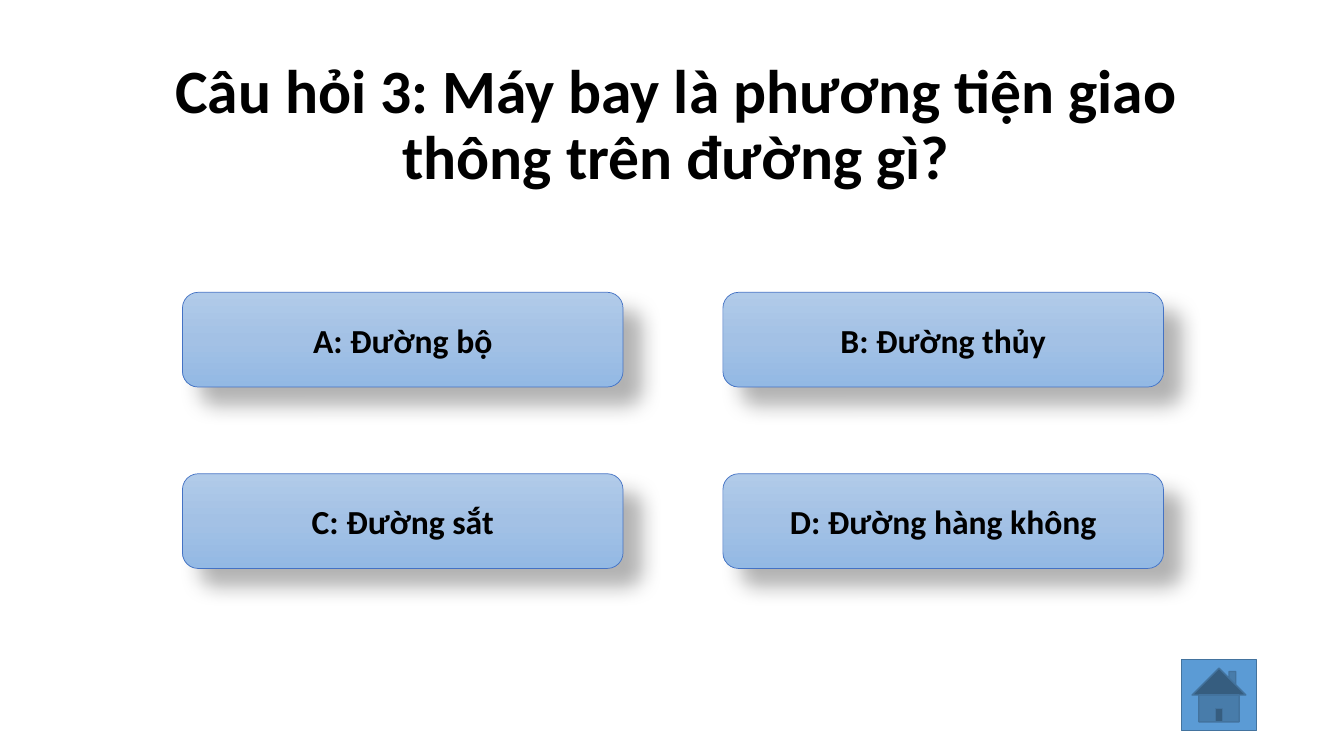
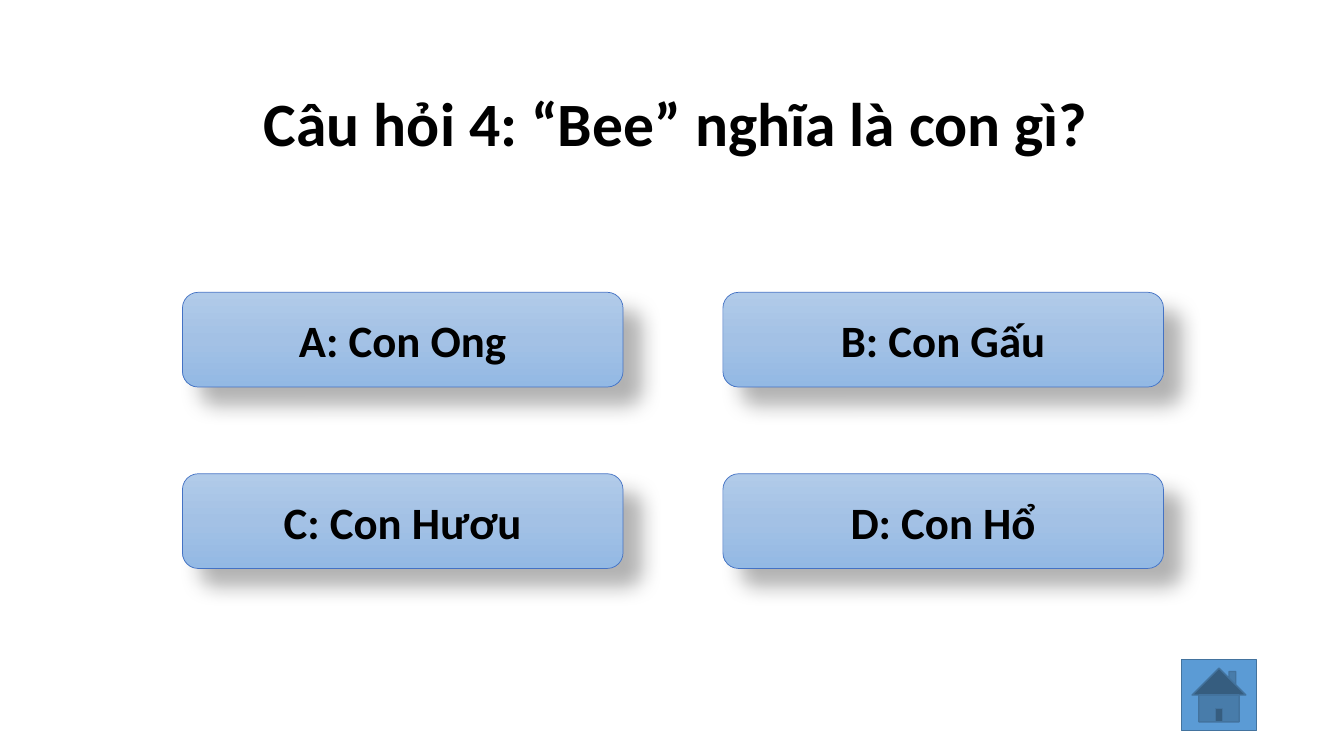
"""Build two multiple-choice quiz slides with a home button."""
import copy
import dataclasses

import pptx
import pptx.dml.color
import pptx.enum.shapes
import pptx.enum.text
import pptx.oxml
import pptx.oxml.ns
import pptx.shapes.autoshape
import pptx.slide
import pptx.util

Inches = pptx.util.Inches
Pt = pptx.util.Pt
Kind = pptx.enum.shapes.MSO_SHAPE
qn = pptx.oxml.ns.qn


@dataclasses.dataclass(frozen=True)
class Theme:
    font: str = "Calibri"
    text: str = "000000"
    answer_stops: tuple[tuple[float, str], ...] = ((0, "B1CBE9"), (0.5, "A3C1E5"), (1, "93B9E4"))
    answer_line: str = "4472C4"
    home_fill: str = "5B9BD5"
    home_line: str = "43739E"
    shadow: str = "000000"
    title_size: float = 44
    answer_line_width: float = 0.5
    home_line_width: float = 1


@dataclasses.dataclass(frozen=True)
class Box:
    left: float
    top: float
    width: float
    height: float

    def lengths(self) -> tuple[pptx.util.Length, ...]:
        return tuple(Inches(value) for value in dataclasses.astuple(self))


@dataclasses.dataclass(frozen=True)
class Question:
    title: str
    answers: tuple[str, str, str, str]
    answer_size: float


THEME = Theme()
TITLE_BOX = Box(0.96, 0.53, 11.5, 1.45)
HOME_BOX = Box(11.72, 6.54, 0.74, 0.71)
FIRST_ANSWER = Box(1.81, 2.9, 4.37, 0.94)
COLUMN_STEP = 5.36
ROW_STEP = 1.8

QUESTIONS = (
    Question(
        "Câu hỏi 3: Máy bay là phương tiện giao thông trên đường gì?",
        ("A: Đường bộ", "B: Đường thủy", "C: Đường sắt", "D: Đường hàng không"),
        24,
    ),
    Question(
        "Câu hỏi 4: “Bee” nghĩa là con gì?",
        ("A: Con Ong", "B: Con Gấu", "C: Con Hươu", "D: Con Hổ"),
        32,
    ),
)


def rgb(value: str) -> pptx.dml.color.RGBColor:
    return pptx.dml.color.RGBColor.from_string(value)


def write_text(
    shape: pptx.shapes.autoshape.Shape, text: str, *, size: float, spacing: float = 1.0
) -> None:
    frame = shape.text_frame
    frame.word_wrap = True
    frame.vertical_anchor = pptx.enum.text.MSO_ANCHOR.MIDDLE
    para = frame.paragraphs[0]
    para.alignment = pptx.enum.text.PP_ALIGN.CENTER
    para.line_spacing = spacing
    span = para.add_run()
    span.text = text
    span.font.name = THEME.font
    span.font.size = Pt(size)
    span.font.bold = True
    span.font.color.rgb = rgb(THEME.text)


def add_box(
    page: pptx.slide.Slide, kind: Kind, box: Box, *, line: str, line_width: float
) -> pptx.shapes.autoshape.Shape:
    shape = page.shapes.add_shape(kind, *box.lengths())
    shape.shadow.inherit = False
    shape.line.color.rgb = rgb(line)
    shape.line.width = Pt(line_width)
    return shape


def fill_gradient(shape: pptx.shapes.autoshape.Shape) -> None:
    shape.fill.gradient()
    shape.fill.gradient_angle = 270
    stop_list = shape.element.spPr.find(qn("a:gradFill")).find(qn("a:gsLst"))
    while len(stop_list) < len(THEME.answer_stops):
        stop_list.append(copy.deepcopy(stop_list[0]))
    for stop, (position, color) in zip(shape.fill.gradient_stops, THEME.answer_stops):
        stop.position = position
        stop.color.rgb = rgb(color)


def add_shadow(shape: pptx.shapes.autoshape.Shape) -> None:
    shadow = pptx.oxml.parse_xml(
        f'<a:outerShdw {pptx.oxml.ns.nsdecls("a")} blurRad="{Pt(15)}" dist="{Pt(18)}"'
        ' dir="2700000" algn="ctr" rotWithShape="0">'
        f'<a:srgbClr val="{THEME.shadow}"><a:alpha val="30000"/></a:srgbClr></a:outerShdw>'
    )
    shape.element.spPr.find(qn("a:effectLst")).append(shadow)


def add_answer(page: pptx.slide.Slide, index: int, text: str, size: float) -> None:
    row, column = divmod(index, 2)
    box = dataclasses.replace(
        FIRST_ANSWER,
        left=FIRST_ANSWER.left + column * COLUMN_STEP,
        top=FIRST_ANSWER.top + row * ROW_STEP,
    )
    shape = add_box(
        page, Kind.ROUNDED_RECTANGLE, box,
        line=THEME.answer_line, line_width=THEME.answer_line_width,
    )
    fill_gradient(shape)
    add_shadow(shape)
    write_text(shape, text, size=size)


def add_home_button(page: pptx.slide.Slide) -> None:
    button = add_box(
        page, Kind.ACTION_BUTTON_HOME, HOME_BOX,
        line=THEME.home_line, line_width=THEME.home_line_width,
    )
    button.fill.solid()
    button.fill.fore_color.rgb = rgb(THEME.home_fill)


def add_question(deck: pptx.presentation.Presentation, question: Question) -> None:
    page = deck.slides.add_slide(deck.slide_layouts[6])
    title = page.shapes.add_textbox(*TITLE_BOX.lengths())
    write_text(title, question.title, size=THEME.title_size, spacing=0.9)
    for index, answer in enumerate(question.answers):
        add_answer(page, index, answer, question.answer_size)
    add_home_button(page)


def main() -> None:
    deck = pptx.Presentation()
    deck.slide_width = Inches(13.33)
    deck.slide_height = Inches(7.5)
    for question in QUESTIONS:
        add_question(deck, question)
    deck.save("out.pptx")


if __name__ == "__main__":
    main()
